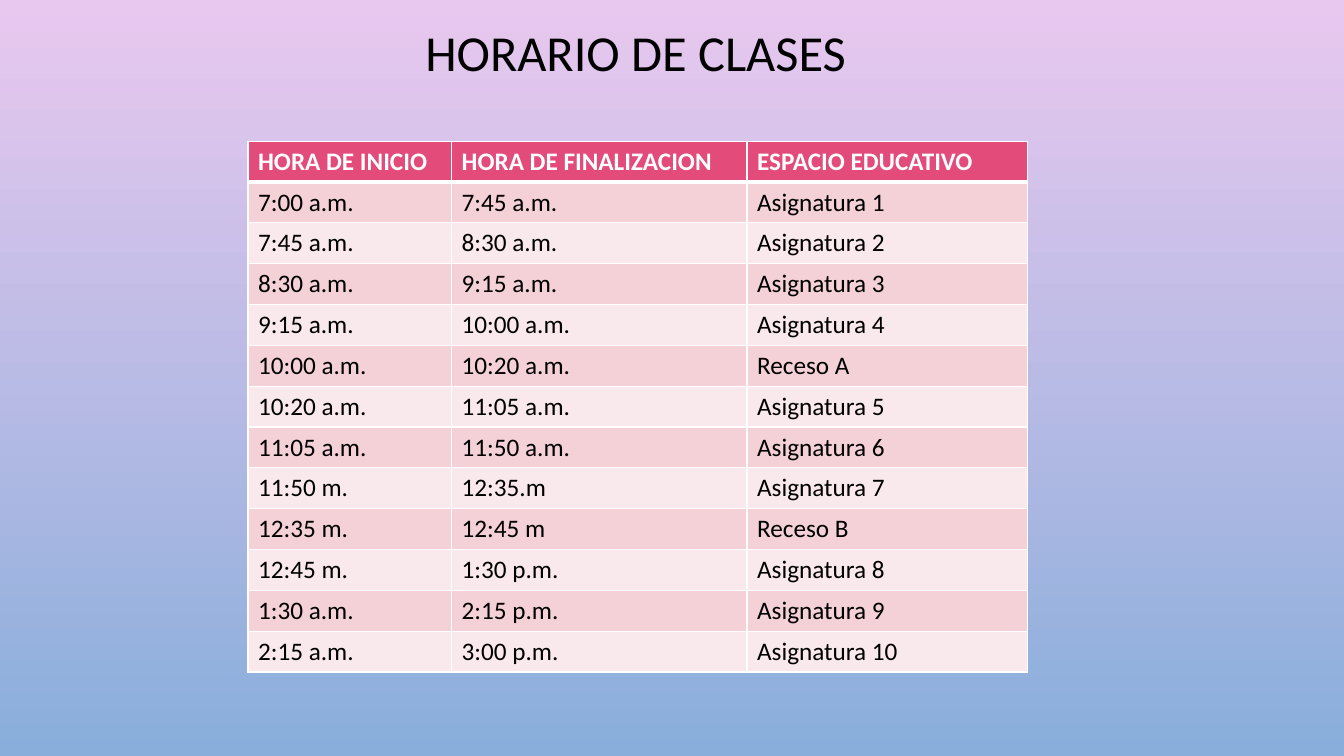
from dataclasses import dataclass

from lxml import etree
from pptx import Presentation
from pptx.dml.color import RGBColor
from pptx.enum.text import MSO_ANCHOR, PP_ALIGN
from pptx.oxml.ns import qn
from pptx.util import Inches, Pt

TITLE = "HORARIO DE CLASES"
HEADINGS = ("HORA DE INICIO", "HORA DE FINALIZACION", "ESPACIO EDUCATIVO")
SCHEDULE = [
    ("7:00 a.m.", "7:45 a.m.", "Asignatura 1"),
    ("7:45 a.m.", "8:30 a.m.", "Asignatura 2"),
    ("8:30 a.m.", "9:15 a.m.", "Asignatura 3"),
    ("9:15 a.m.", "10:00 a.m.", "Asignatura 4"),
    ("10:00 a.m.", "10:20 a.m.", "Receso A"),
    ("10:20 a.m.", "11:05 a.m.", "Asignatura 5"),
    ("11:05 a.m.", "11:50 a.m.", "Asignatura 6"),
    ("11:50 m.", "12:35.m", "Asignatura 7"),
    ("12:35 m.", "12:45 m", "Receso B"),
    ("12:45 m.", "1:30 p.m.", "Asignatura 8"),
    ("1:30 a.m.", "2:15 p.m.", "Asignatura 9"),
    ("2:15 a.m.", "3:00 p.m.", "Asignatura 10"),
]
COLUMN_WIDTHS = (2.02, 2.93, 2.78)
TABLE_LEFT, TABLE_TOP, TABLE_HEIGHT = 2.46, 1.4, 5.27


@dataclass(frozen=True)
class Theme:
    font: str = "Calibri"
    title_size: int = 36
    table_size: int = 18
    text: str = "000000"
    heading_text: str = "FFFFFF"
    heading_fill: str = "E34B7A"
    bands: tuple = ("F4D0D7", "FAE9EC")
    border: str = "FFFFFF"
    border_width: int = 1
    heading_rule_width: int = 3
    background: tuple = ("E9C8EF", "89AEDB")


THEME = Theme()


def set_font(paragraph, size, color, bold=False):
    font = paragraph.font
    font.name, font.size, font.bold = THEME.font, Pt(size), bold
    font.color.rgb = RGBColor.from_string(color)


def set_borders(cell, top, bottom):
    properties = cell._tc.get_or_add_tcPr()
    widths = {"L": THEME.border_width, "R": THEME.border_width, "T": top, "B": bottom}
    for position, (side, width) in enumerate(widths.items()):
        line = etree.Element(qn(f"a:ln{side}"), w=str(Pt(width)))
        fill = etree.SubElement(line, qn("a:solidFill"))
        etree.SubElement(fill, qn("a:srgbClr"), val=THEME.border)
        properties.insert(position, line)


def paint_background(slide):
    fill = slide.background.fill
    fill.gradient()
    fill.gradient_angle = 270
    for stop, color in zip(fill.gradient_stops, THEME.background):
        stop.color.rgb = RGBColor.from_string(color)


def add_title(slide):
    title = slide.shapes.add_textbox(Inches(0.64), Inches(0.2), Inches(11.33), Inches(0.69))
    frame = title.text_frame
    frame.word_wrap = True
    frame.vertical_anchor = MSO_ANCHOR.MIDDLE
    paragraph = frame.paragraphs[0]
    paragraph.text = TITLE
    paragraph.alignment = PP_ALIGN.CENTER
    paragraph.line_spacing = 0.9
    set_font(paragraph, THEME.title_size, THEME.text)


def add_schedule(slide):
    rows = [HEADINGS, *SCHEDULE]
    table = slide.shapes.add_table(
        len(rows), len(HEADINGS), Inches(TABLE_LEFT), Inches(TABLE_TOP),
        Inches(sum(COLUMN_WIDTHS)), Inches(TABLE_HEIGHT),
    ).table
    for column, width in zip(table.columns, COLUMN_WIDTHS):
        column.width = Inches(width)
    for row_index, row in enumerate(rows):
        heading = row_index == 0
        fill = THEME.heading_fill if heading else THEME.bands[(row_index - 1) % 2]
        color = THEME.heading_text if heading else THEME.text
        top = THEME.heading_rule_width if row_index == 1 else THEME.border_width
        bottom = THEME.heading_rule_width if heading else THEME.border_width
        for column_index, entry in enumerate(row):
            cell = table.cell(row_index, column_index)
            cell.text = entry
            cell.fill.solid()
            cell.fill.fore_color.rgb = RGBColor.from_string(fill)
            set_borders(cell, top, bottom)
            set_font(cell.text_frame.paragraphs[0], THEME.table_size, color, heading)


def main():
    presentation = Presentation()
    presentation.slide_width, presentation.slide_height = Inches(13.33), Inches(7.5)
    slide = presentation.slides.add_slide(presentation.slide_layouts[6])
    paint_background(slide)
    add_title(slide)
    add_schedule(slide)
    presentation.save("out.pptx")


if __name__ == "__main__":
    main()
